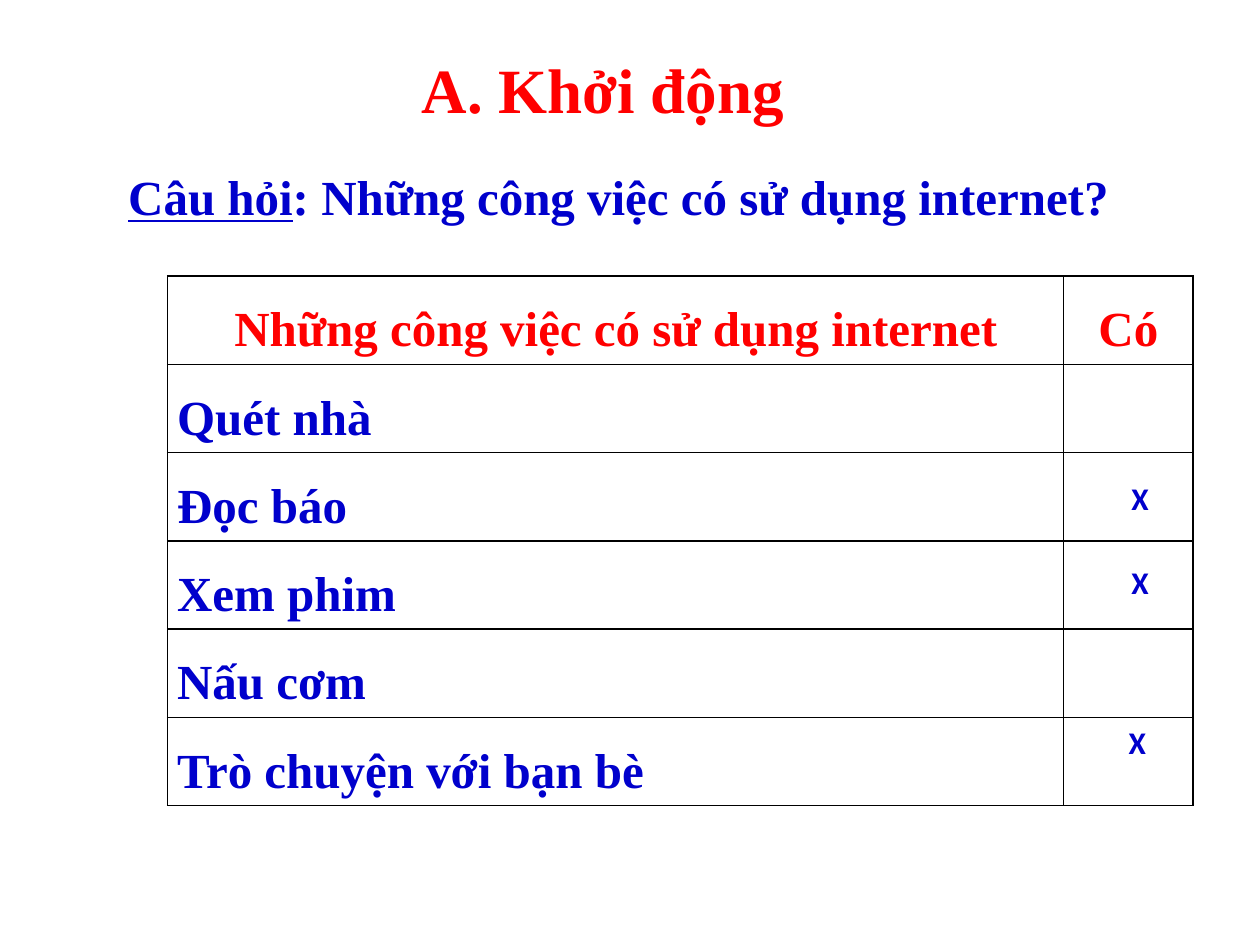
from dataclasses import dataclass

from lxml.etree import SubElement
from pptx import Presentation
from pptx.dml.color import RGBColor
from pptx.enum.text import MSO_AUTO_SIZE as AutoSize, PP_ALIGN as Align
from pptx.oxml.ns import qn
from pptx.util import Pt


@dataclass(frozen=True)
class Theme:
    red: str = "FF0000"
    blue: str = "0000CC"
    border: str = "000000"
    serif: str = "Times New Roman"
    sans: str = "Calibri"
    title: int = 36
    body: int = 28
    mark: int = 18


THEME = Theme()
SPACED = {"line_spacing": 1.5, "space_after": Pt(10)}
HEADERS = ["Những công việc có sử dụng internet", "Có"]
TASKS = ["Quét nhà", "Đọc báo", "Xem phim", "Nấu cơm", "Trò chuyện với bạn bè"]
COLUMN_WIDTHS = [512, 74]
ROW_HEIGHT = 49.1
MARKS = [(639.4, 270), (639.4, 318.2), (637.9, 409.7)]


def apply_format(target, values):
    for name, value in values.items():
        setattr(target, name, value)


def add_run(paragraph, text, size, color, font=THEME.serif, **values):
    run = paragraph.add_run()
    run.text = text
    apply_format(run.font, {"name": font, "size": Pt(size), "bold": True, **values})
    run.font.color.rgb = RGBColor.from_string(color)


def add_text(slide, left, top, width, height, wrap=True):
    box = slide.shapes.add_textbox(Pt(left), Pt(top), Pt(width), Pt(height))
    apply_format(box.text_frame, {"word_wrap": wrap, "auto_size": AutoSize.SHAPE_TO_FIT_TEXT})
    return box.text_frame.paragraphs[0]


def style_cell(cell):
    apply_format(cell, {"margin_left": Pt(5.4), "margin_right": Pt(5.4),
                        "margin_top": 0, "margin_bottom": 0})
    properties = cell._tc.get_or_add_tcPr()
    for side in ("lnL", "lnR", "lnT", "lnB"):
        line = SubElement(properties, qn(f"a:{side}"), w=str(Pt(1)))
        fill = SubElement(line, qn("a:solidFill"))
        SubElement(fill, qn("a:srgbClr"), val=THEME.border)
    cell.fill.background()


def fill_cell(cell, text, color, alignment):
    paragraph = cell.text_frame.paragraphs[0]
    apply_format(paragraph, {**SPACED, "alignment": alignment})
    add_run(paragraph, text, THEME.body, color)


def add_task_table(slide, left, top):
    row_count = len(TASKS) + 1
    frame = slide.shapes.add_table(row_count, len(HEADERS), Pt(left), Pt(top),
                                   Pt(sum(COLUMN_WIDTHS)), Pt(ROW_HEIGHT * row_count))
    table = frame.table
    apply_format(table, {"first_row": False, "horz_banding": False})
    for column, width in zip(table.columns, COLUMN_WIDTHS):
        column.width = Pt(width)
    for row in table.rows:
        row.height = Pt(ROW_HEIGHT)
    for cell in table.iter_cells():
        style_cell(cell)
    for index, header in enumerate(HEADERS):
        fill_cell(table.cell(0, index), header, THEME.red, Align.CENTER)
    for index, task in enumerate(TASKS, start=1):
        fill_cell(table.cell(index, 0), task, THEME.blue, Align.LEFT)


def main():
    presentation = Presentation()
    apply_format(presentation, {"slide_width": Pt(720), "slide_height": Pt(540)})
    slide = presentation.slides.add_slide(presentation.slide_layouts[6])

    title = add_text(slide, 234, 25.2, 223.2, 51.1, wrap=False)
    add_run(title, "A. Khởi động", THEME.title, THEME.red)

    question = add_text(slide, 66.2, 74.9, 594, 58.3)
    apply_format(question, SPACED)
    add_run(question, "Câu hỏi", THEME.body, THEME.blue, underline=True)
    add_run(question, ": Những công việc có sử dụng internet?", THEME.body, THEME.blue)

    add_task_table(slide, 95.8, 157.7)
    for left, top in MARKS:
        add_run(add_text(slide, left, top, 41.8, 29.5), "X", THEME.mark, THEME.blue, THEME.sans)

    presentation.save("out.pptx")


if __name__ == "__main__":
    main()
